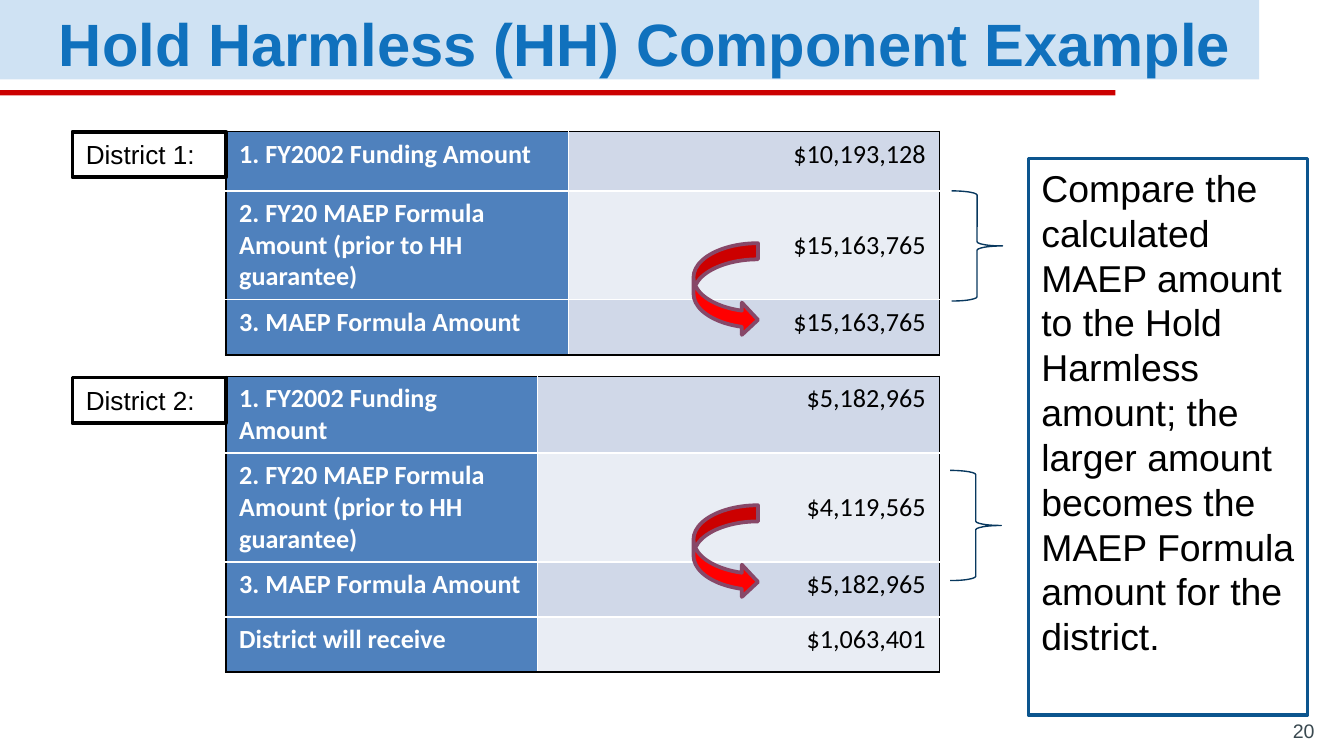
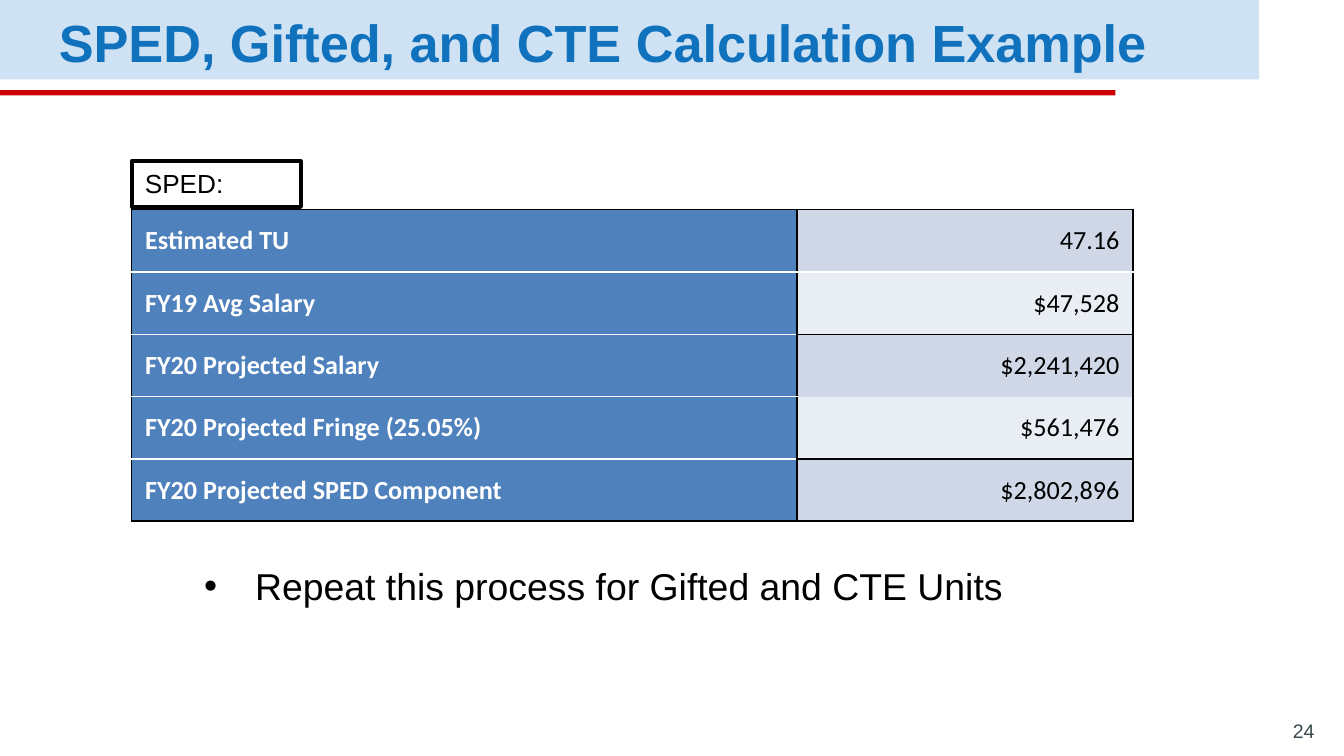
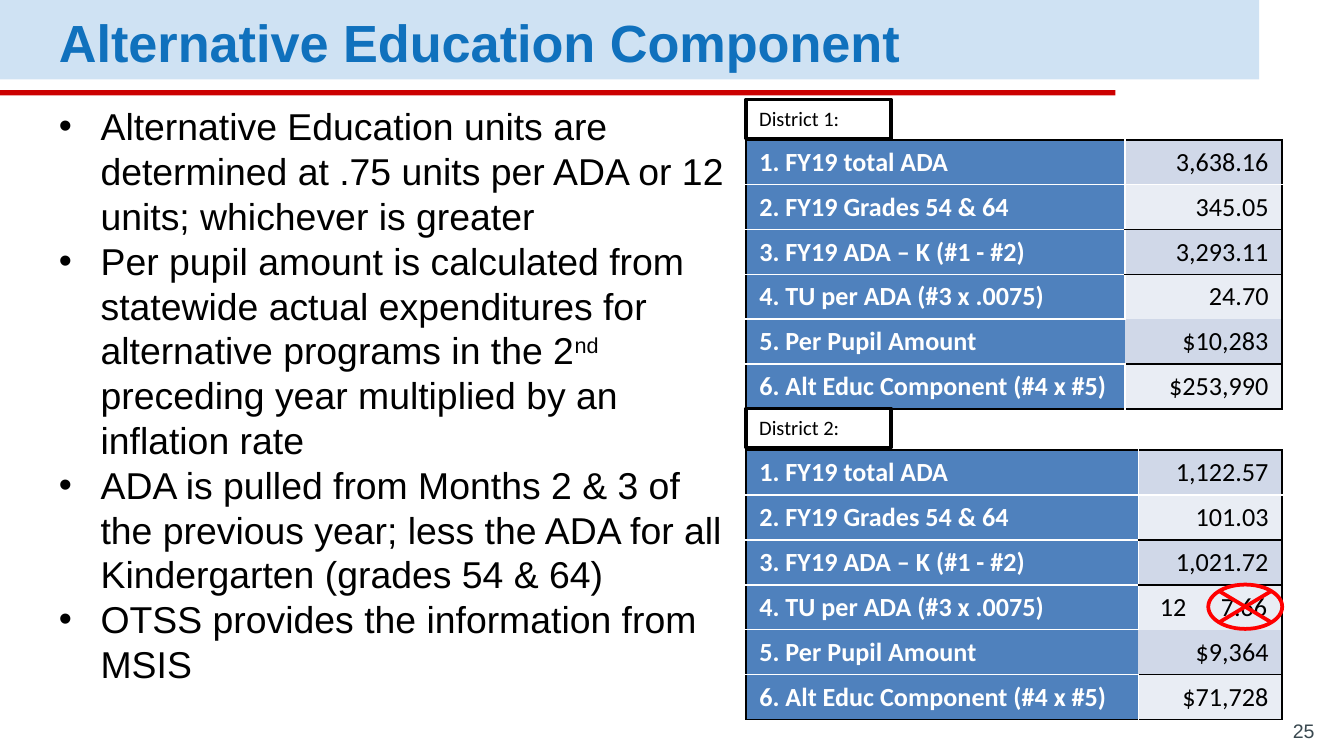
"""Build three slides of school funding formula examples."""
from dataclasses import dataclass

from lxml.etree import SubElement
from pptx import Presentation
from pptx.dml.color import RGBColor
from pptx.enum.shapes import MSO_SHAPE
from pptx.enum.text import MSO_ANCHOR, PP_ALIGN
from pptx.oxml.ns import qn
from pptx.util import Inches, Pt


@dataclass(frozen=True)
class Theme:
    """Colours, fonts and type sizes shared by the slides."""
    band: str = "CFE2F3"
    accent: str = "CC0000"
    title: str = "1071BD"
    page_number: str = "3A4950"
    text: str = "000000"
    white: str = "FFFFFF"
    label_cell: str = "4F81BD"
    value_cells: tuple = ("D0D8E8", "E9EDF4")
    note_line: str = "0C558E"
    brace: str = "08385E"
    arrow: str = "FF0000"
    arrow_line: str = "874868"
    body_font: str = "Arial"
    table_font: str = "Calibri"
    title_size: float = 28
    large_title_size: float = 32
    body_size: float = 20
    table_size: float = 14
    small_label_size: float = 11
    page_number_size: float = 10.5


THEME = Theme()
BORDERS = {"w": THEME.white, "k": THEME.text, "-": None}
ADA_LABELS = ["1. FY19 total ADA", "2. FY19 Grades 54 & 64", "3. FY19 ADA – K (#1 - #2)",
              "4. TU per ADA (#3 x .0075)", "5. Per Pupil Amount",
              "6. Alt Educ Component (#4 x #5)"]
HOLD_LABELS = ["1. FY2002 Funding Amount", "2. FY20 MAEP Formula Amount (prior to HH guarantee)",
               "3. MAEP Formula Amount", "District will receive"]


def set_font(paragraph, size, color=THEME.text, name=THEME.body_font, bold=False):
    """Set the font of a whole paragraph."""
    font = paragraph.font
    font.size, font.name, font.bold = Pt(size), name, bold
    font.color.rgb = RGBColor.from_string(color)


def add_shape(slide, kind, box, fill=None, line=None, line_width=2):
    """Add a flat preset shape with an optional fill and outline."""
    shape = slide.shapes.add_shape(kind, *map(Inches, box))
    shape.shadow.inherit = False
    if fill:
        shape.fill.solid()
        shape.fill.fore_color.rgb = RGBColor.from_string(fill)
    else:
        shape.fill.background()
    if line:
        shape.line.color.rgb = RGBColor.from_string(line)
        shape.line.width = Pt(line_width)
    else:
        shape.line.fill.background()
    return shape


def add_text_box(slide, box, anchor=MSO_ANCHOR.TOP, vertical_inset=0.05):
    """Add a wrapping text box and return its text frame."""
    frame = slide.shapes.add_textbox(*map(Inches, box)).text_frame
    frame.word_wrap = True
    frame.vertical_anchor = anchor
    frame.margin_top = frame.margin_bottom = Inches(vertical_inset)
    return frame


def add_boxed_text(slide, box, text, size, font=THEME.body_font, **style):
    """Add an outlined rectangle with text at its top left."""
    frame = add_shape(slide, MSO_SHAPE.RECTANGLE, box, **style).text_frame
    frame.word_wrap = True
    frame.vertical_anchor = MSO_ANCHOR.TOP
    paragraph = frame.paragraphs[0]
    paragraph.text = text
    paragraph.alignment = PP_ALIGN.LEFT
    set_font(paragraph, size, name=font)


def add_label(slide, box, text, size=THEME.table_size, font=THEME.body_font):
    """Add the black-framed name of a table."""
    add_boxed_text(slide, box, text, size, font, fill=THEME.white, line=THEME.text)


def add_bullets(slide, box, items, indent):
    """Add bulleted paragraphs; each item is a list of text and baseline pairs."""
    frame = add_text_box(slide, box)
    for index, runs in enumerate(items):
        paragraph = frame.add_paragraph() if index else frame.paragraphs[0]
        for text, baseline in runs:
            run = paragraph.add_run()
            run.text = text
            if baseline:
                run.font._element.set("baseline", str(baseline * 1000))
        properties = paragraph._p.get_or_add_pPr()
        properties.set("marL", str(Inches(indent)))
        properties.set("indent", str(-Inches(indent)))
        SubElement(properties, qn("a:buFont"), typeface=THEME.body_font)
        SubElement(properties, qn("a:buChar"), char="•")
        set_font(paragraph, THEME.body_size)


def set_borders(cell, left, right, top, bottom):
    """Draw the four borders of a cell from their colour keys."""
    properties = cell._tc.get_or_add_tcPr()
    for side, key in zip("LRTB", (left, right, top, bottom)):
        line = SubElement(properties, qn(f"a:ln{side}"), w=str(Pt(1)))
        if BORDERS[key]:
            fill = SubElement(line, qn("a:solidFill"))
            SubElement(fill, qn("a:srgbClr"), val=BORDERS[key])
        else:
            SubElement(line, qn("a:noFill"))


def fill_cell(cell, text, fill, color, bold, alignment):
    """Write the text of a cell and set its fill."""
    cell.fill.solid()
    cell.fill.fore_color.rgb = RGBColor.from_string(fill)
    paragraph = cell.text_frame.paragraphs[0]
    paragraph.text = text
    paragraph.alignment = alignment
    if "\t" in text:
        paragraph.alignment = PP_ALIGN.LEFT
        cell.margin_left = Inches(0.16)
        tabs = SubElement(paragraph._p.get_or_add_pPr(), qn("a:tabLst"))
        SubElement(tabs, qn("a:tab"), pos=str(Inches(0.8)), algn="r")
    set_font(paragraph, THEME.table_size, color, THEME.table_font, bold)


def add_amount_table(slide, position, widths, heights, labels, values,
                     value_rules, dividers, middle_rows=()):
    """Add a table of labels and amounts with keyed inner border colours."""
    count = len(values)
    size = sum(widths), sum(heights)
    table = slide.shapes.add_table(count, 2, *map(Inches, position + size)).table
    table.first_row = table.horz_banding = False
    for column, width in zip(table.columns, widths):
        column.width = Inches(width)
    label_lines = "k" + "w" * (count - 1) + "k"
    value_lines = "k" + value_rules + "k"
    for row, (label, value) in enumerate(zip(labels, values)):
        table.rows[row].height = Inches(heights[row])
        label_cell, value_cell = table.cell(row, 0), table.cell(row, 1)
        set_borders(label_cell, "k", dividers[row], *label_lines[row:row + 2])
        set_borders(value_cell, dividers[row], "k", *value_lines[row:row + 2])
        fill_cell(label_cell, label, THEME.label_cell, THEME.white, True, PP_ALIGN.LEFT)
        fill_cell(value_cell, value, THEME.value_cells[row % 2], THEME.text, False,
                  PP_ALIGN.RIGHT)
        if row in middle_rows:
            label_cell.vertical_anchor = value_cell.vertical_anchor = MSO_ANCHOR.MIDDLE


def add_slide(presentation, title, number, title_size=THEME.title_size):
    """Add a slide with its band, rule, title and page number."""
    slide = presentation.slides.add_slide(presentation.slide_layouts[6])
    add_shape(slide, MSO_SHAPE.RECTANGLE, (0, 0, 9.37, 0.59), THEME.band)
    add_shape(slide, MSO_SHAPE.RECTANGLE, (0, 0.67, 8.3, 0.04), THEME.accent)
    heading = add_text_box(slide, (0.34, 0.03, 9.03, 0.49), MSO_ANCHOR.MIDDLE, 0.1).paragraphs[0]
    heading.text = title
    heading.line_spacing = 1.15
    heading.space_after = Pt(16)
    set_font(heading, title_size, THEME.title, bold=True)
    footer = add_text_box(slide, (9.28, 5.35, 0.6, 0.26), MSO_ANCHOR.BOTTOM, 0.1).paragraphs[0]
    footer.text = str(number)
    footer.alignment = PP_ALIGN.RIGHT
    set_font(footer, THEME.page_number_size, THEME.page_number)
    return slide


def build_hold_harmless(presentation):
    """Build the slide that compares two districts with the guarantee."""
    slide = add_slide(presentation, "Hold Harmless (HH) Component Example", 20,
                      THEME.large_title_size)
    districts = [
        (0.98, (2.55, 2.76), (0.44, 0.81, 0.41), ["$10,193,128", "$15,163,765", "$15,163,765"]),
        (2.8, (2.32, 2.99), (0.57, 0.81, 0.41, 0.41),
         ["$5,182,965", "$4,119,565", "$5,182,965", "$1,063,401"]),
    ]
    for top, widths, heights, values in districts:
        count = len(values)
        add_amount_table(slide, (1.68, top), widths, heights, HOLD_LABELS, values,
                         "w" * (count - 1), "w" * count, middle_rows=(1,))
    for top in (1.81, 3.76):
        add_shape(slide, MSO_SHAPE.CURVED_RIGHT_ARROW, (5.16, top, 0.48, 0.69),
                  THEME.arrow, THEME.arrow_line)
    add_boxed_text(slide, (7.65, 1.18, 2.08, 4.14),
                   "Compare the calculated MAEP amount to the Hold Harmless amount; the larger "
                   "amount becomes the MAEP Formula amount for the district.",
                   THEME.body_size, line=THEME.note_line, line_width=1.75)
    for number, top in enumerate((0.98, 2.81), 1):
        add_label(slide, (0.54, top, 1.14, 0.34), f"District {number}:")
    for left, top in ((7.08, 1.42), (7.07, 3.5)):
        add_shape(slide, MSO_SHAPE.RIGHT_BRACE, (left, top, 0.38, 0.82),
                  line=THEME.brace, line_width=0.75)


def build_sped(presentation):
    """Build the slide with the special education calculation."""
    slide = add_slide(presentation, "SPED, Gifted, and CTE Calculation Example", 24)
    labels = ["Estimated TU", "FY19 Avg Salary", "FY20 Projected Salary",
              "FY20 Projected Fringe (25.05%)", "FY20 Projected SPED Component"]
    values = ["47.16", "$47,528", "$2,241,420", "$561,476", "$2,802,896"]
    add_amount_table(slide, (0.98, 1.56), (4.95, 2.5), (2.32 / 5,) * 5, labels, values,
                     "wk-k", "kkkkk", middle_rows=range(5))
    add_label(slide, (0.98, 1.2, 1.26, 0.34), "SPED:")
    add_bullets(slide, (1.42, 4.14, 6.39, 0.72),
                [[("Repeat this process for Gifted and CTE Units", 0)]], 0.38)


def build_alternative_education(presentation):
    """Build the slide with the alternative education rules and examples."""
    slide = add_slide(presentation, "Alternative Education Component", 25)
    add_bullets(slide, (0.34, 0.72, 5.21, 4.48), [
        [("Alternative Education units are determined at .75 units per ADA or 12 units; "
          "whichever is greater", 0)],
        [("Per pupil amount is calculated from statewide actual expenditures for "
          "alternative programs in the 2", 0), ("nd", 30),
         (" preceding year multiplied by an inflation rate", 0)],
        [("ADA is pulled from Months 2 & 3 of the previous year; less the ADA for all "
          "Kindergarten (grades 54 & 64)", 0)],
        [("OTSS provides the information from MSIS", 0)],
    ], 0.31)
    districts = [
        (1.04, 0.74, (2.82, 1.17),
         ["3,638.16", "345.05", "3,293.11", "24.70", "$10,283", "$253,990"]),
        (3.35, 3.04, (2.92, 1.07),
         ["1,122.57", "101.03", "1,021.72", "12\t7.66", "$9,364", "$71,728"]),
    ]
    for number, (top, label_top, widths, values) in enumerate(districts, 1):
        add_amount_table(slide, (5.55, top), widths, (2 / 6,) * 6, ADA_LABELS, values,
                         "wkk-k", "wwww-w")
        add_label(slide, (5.55, label_top, 1.08, 0.29), f"District {number}:",
                  THEME.small_label_size, THEME.table_font)
    add_shape(slide, MSO_SHAPE.FLOWCHART_SUMMING_JUNCTION, (8.99, 4.35, 0.55, 0.33),
              line=THEME.arrow)


def main():
    """Build and save the presentation."""
    presentation = Presentation()
    presentation.slide_width = Inches(10)
    presentation.slide_height = Inches(10 * 9 / 16)
    build_hold_harmless(presentation)
    build_sped(presentation)
    build_alternative_education(presentation)
    presentation.save("out.pptx")


if __name__ == "__main__":
    main()
